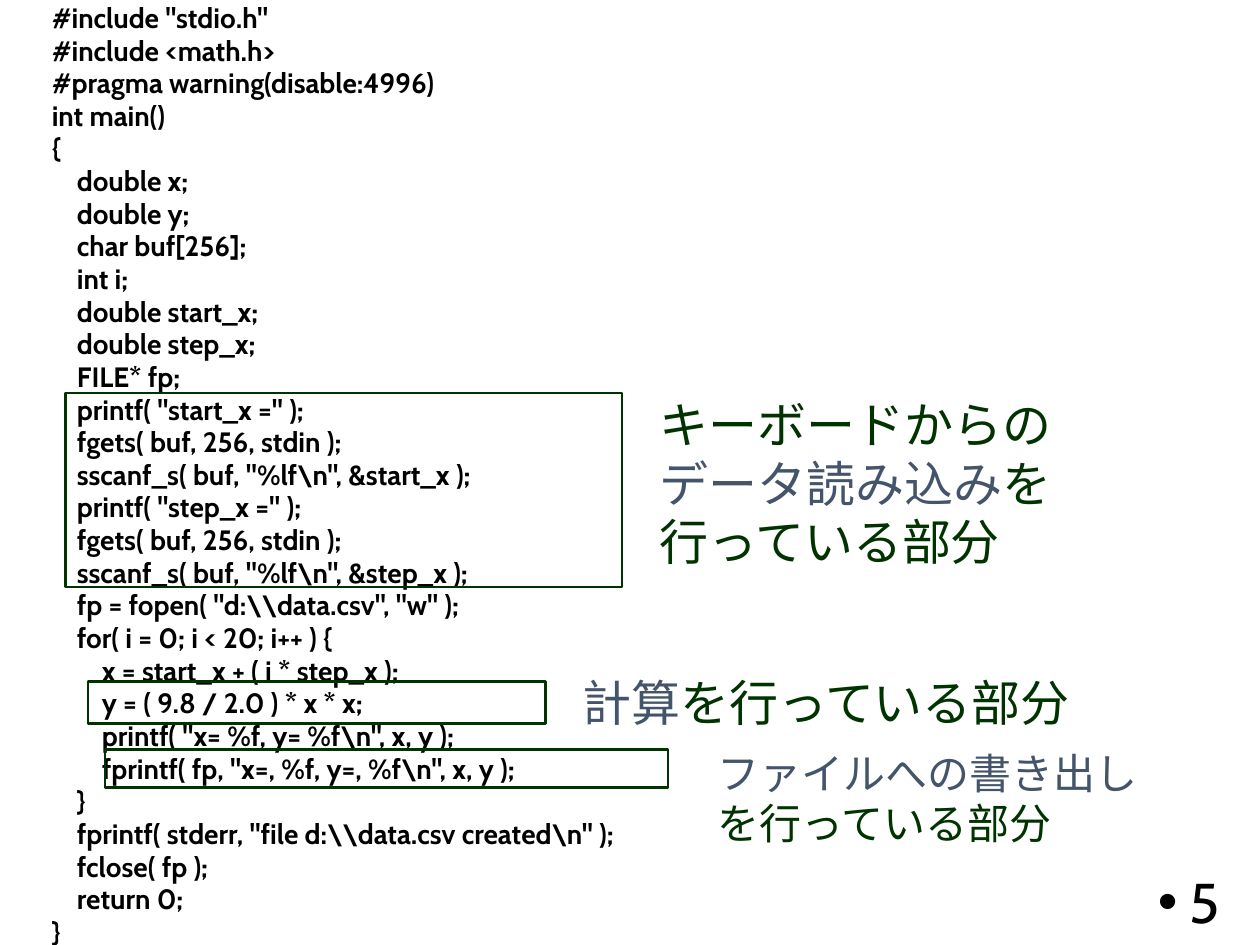
from dataclasses import dataclass

from lxml import etree
from pptx import Presentation
from pptx.dml.color import RGBColor
from pptx.enum.shapes import MSO_SHAPE
from pptx.enum.text import MSO_ANCHOR, PP_ALIGN
from pptx.oxml.ns import qn
from pptx.util import Pt

RECT = MSO_SHAPE.RECTANGLE
MIDDLE = MSO_ANCHOR.MIDDLE
RIGHT = PP_ALIGN.RIGHT


@dataclass(frozen=True)
class Theme:
    font: str = "Cabin"
    black: RGBColor = RGBColor(0, 0, 0)
    green: RGBColor = RGBColor(0x00, 0x33, 0x00)
    slate: RGBColor = RGBColor(0x44, 0x54, 0x6A)
    code: int = 16
    note: int = 28
    small_note: int = 24
    number: int = 32


THEME = Theme()

CODE = r'''#include "stdio.h"
#include <math.h>
#pragma warning(disable:4996)
int main()
{
    double x;
    double y;
    char buf[256];
    int i;
    double start_x;
    double step_x;
    FILE* fp;
    printf( "start_x =" );
    fgets( buf, 256, stdin );
    sscanf_s( buf, "%lf\n", &start_x );
    printf( "step_x =" );
    fgets( buf, 256, stdin );
    sscanf_s( buf, "%lf\n", &step_x );
    fp = fopen( "d:\\data.csv", "w" );
    for( i = 0; i < 20; i++ ) {
        x = start_x + ( i * step_x );
        y = ( 9.8 / 2.0 ) * x * x;
        printf( "x= %f, y= %f\n", x, y );
        fprintf( fp, "x=, %f, y=, %f\n", x, y );
    }
    fprintf( stderr, "file d:\\data.csv created\n" );
    fclose( fp );
    return 0;
}'''


class Builder:
    def __init__(self, s, theme):
        self.s = s
        self.theme = theme

    def box(self, at, wrap=True):
        tf = self.s.shapes.add_textbox(*map(Pt, at)).text_frame
        tf.word_wrap = wrap
        return tf

    def run(self, p, text, size, color, bold=False):
        r = p.add_run()
        r.text = text
        r.font.name = self.theme.font
        r.font.size = Pt(size)
        r.font.bold = bold
        r.font.color.rgb = color
        for tag in ("a:ea", "a:cs"):
            etree.SubElement(r.font._element, qn(tag)).set("typeface", self.theme.font)

    def code(self, at, source):
        tf = self.box(at)
        for i, line in enumerate(source.splitlines()):
            p = tf.add_paragraph() if i else tf.paragraphs[0]
            p.line_spacing = 0.45
            p.space_before = Pt(10 if i else 0)
            self.run(p, line, self.theme.code, self.theme.black, True)

    def frame(self, at):
        sp = self.s.shapes.add_shape(RECT, *map(Pt, at))
        sp.shadow.inherit = False
        sp.fill.background()
        sp.line.color.rgb = self.theme.green
        sp.line.width = Pt(1.5)

    def note(self, at, lines, size):
        tf = self.box(at, wrap=False)
        for i, line in enumerate(lines):
            p = tf.add_paragraph() if i else tf.paragraphs[0]
            for text, color in line:
                self.run(p, text, size, color)

    def number(self, at, text):
        tf = self.box(at)
        tf.vertical_anchor = MIDDLE
        p = tf.paragraphs[0]
        p.alignment = RIGHT
        pPr = p._p.get_or_add_pPr()
        pPr.set("marL", str(Pt(18)))
        pPr.set("indent", str(Pt(-18)))
        etree.SubElement(pPr, qn("a:buFont")).set("typeface", "Arial")
        etree.SubElement(pPr, qn("a:buChar")).set("char", "•")
        self.run(p, text, self.theme.number, self.theme.black)


def main():
    prs = Presentation()
    prs.slide_width, prs.slide_height = Pt(720), Pt(540)
    s = prs.slides.add_slide(prs.slide_layouts[6])
    b = Builder(s, THEME)
    green, slate = THEME.green, THEME.slate

    b.code((22.5, 5.75, 666, 420), CODE)
    b.number((542, 500.5, 162, 29), "5")

    b.frame((50.25, 389.5, 261.5, 24))
    b.note((326, 381, 297.5, 41),
           [[("計算", slate), ("を行っている部分", green)]], THEME.note)

    b.frame((37.5, 224.5, 318, 111))
    b.note((370, 221.75, 240.5, 108.75),
           [[("キーボードからの", green)],
            [("データ読み込み", slate), ("を", green)],
            [("行っている部分", green)]], THEME.note)

    b.frame((60, 428.25, 321.75, 21.75))
    b.note((403, 423.5, 257, 65.5),
           [[("ファイルへの書き出し", slate)],
            [("を行っている部分", green)]], THEME.small_note)

    prs.save("out.pptx")


if __name__ == "__main__":
    main()
